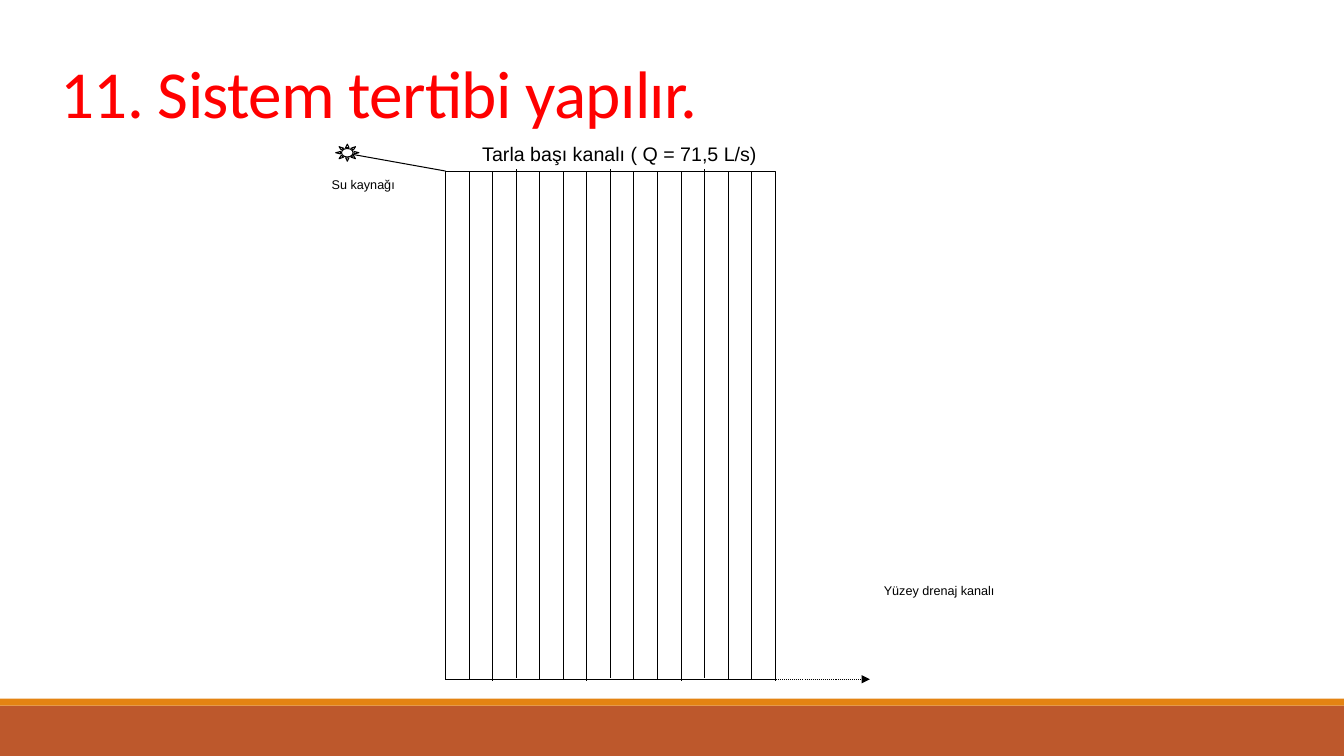
from lxml import etree
from pptx import Presentation
from pptx.dml.color import RGBColor
from pptx.enum import dml, shapes, text
from pptx.oxml import ns
from pptx.util import Pt


def paint(color_format, color):
    """Set a fill's or line's solid colour from a hex string."""
    color_format.solid()
    color_format.fore_color.rgb = RGBColor.from_string(color)


def draw_line(x1, y1, x2, y2):
    line = page.shapes.add_connector(
        shapes.MSO_CONNECTOR.STRAIGHT, Pt(x1), Pt(y1), Pt(x2), Pt(y2))
    paint(line.line.fill, "000000")
    line.line.width = Pt(0.75)
    etree.SubElement(line._element.spPr, ns.qn("a:effectLst"))
    return line


deck = Presentation()
deck.slide_width, deck.slide_height = Pt(960), Pt(540)
page = deck.slides.add_slide(deck.slide_layouts[5])

# Footer bands
for top, height, color in [(504, 36, "BD582C"), (499, 5, "E48312")]:
    band = page.shapes.add_shape(
        shapes.MSO_SHAPE.RECTANGLE, 0, Pt(top), deck.slide_width, Pt(height))
    band.shadow.inherit = False
    paint(band.fill, color)
    band.line.fill.background()

# Title
title = page.shapes.title
title.left, title.top, title.width, title.height = Pt(36), Pt(42), Pt(648), Pt(90)
frame = title.text_frame
frame.text = "11. Sistem tertibi yapılır."
frame.auto_size = text.MSO_AUTO_SIZE.NONE
frame.vertical_anchor = text.MSO_ANCHOR.TOP
para = frame.paragraphs[0]
para.alignment = text.PP_ALIGN.LEFT
para.line_spacing = 0.85
span = para.runs[0]
span.font.name, span.font.size = "Calibri", Pt(48)
paint(span.font.fill, "FF0000")
span._r.get_or_add_rPr().set("spc", "-50")

# Field, furrows and water source
field_left, field_top, field_width, field_height = 318.2, 122.2, 235.6, 363
field_bottom = field_top + field_height
draw_line(field_left, field_top, 251.3, 110.2)
for kind, left, top, width, height in [
        (shapes.MSO_SHAPE.RECTANGLE, field_left, field_top, field_width, field_height),
        (shapes.MSO_SHAPE.SUN, 239.8, 103, 16.6, 12.2)]:
    shape = page.shapes.add_shape(kind, Pt(left), Pt(top), Pt(width), Pt(height))
    shape.shadow.inherit = False
    paint(shape.fill, "FFFFFF")
    paint(shape.line.fill, "000000")
    shape.line.width = Pt(0.75)

furrow_count = 14
furrow_shifts = [0, 1, -1.2, 0]
for index in range(furrow_count):
    x = field_left + (index + 1) * field_width / furrow_count
    y = field_top + furrow_shifts[index % len(furrow_shifts)]
    draw_line(x, y, x, y + field_height)

# Drainage channel
drain = draw_line(field_left, field_bottom, 621.4, field_bottom)
drain.line.dash_style = dml.MSO_LINE.ROUND_DOT
etree.SubElement(drain.line._get_or_add_ln(), ns.qn("a:tailEnd"), type="triangle")

# Labels
for label, left, top, width, size in [
        ("Su kaynağı", 217.4, 123.1, 84.2, 9),
        ("Tarla başı kanalı ( Q = 71,5 L/s) ", 318.2, 97.9, 252.7, 14),
        ("Yüzey drenaj kanalı ", 604.8, 412.6, 134.6, 9)]:
    box = page.shapes.add_textbox(Pt(left), Pt(top), Pt(width), Pt(60.5))
    box.text_frame.word_wrap = True
    box.text_frame.text = label
    para = box.text_frame.paragraphs[0]
    para.alignment = text.PP_ALIGN.CENTER
    span = para.runs[0]
    span.font.name, span.font.size = "Arial", Pt(size)
    paint(span.font.fill, "000000")

deck.save("out.pptx")
